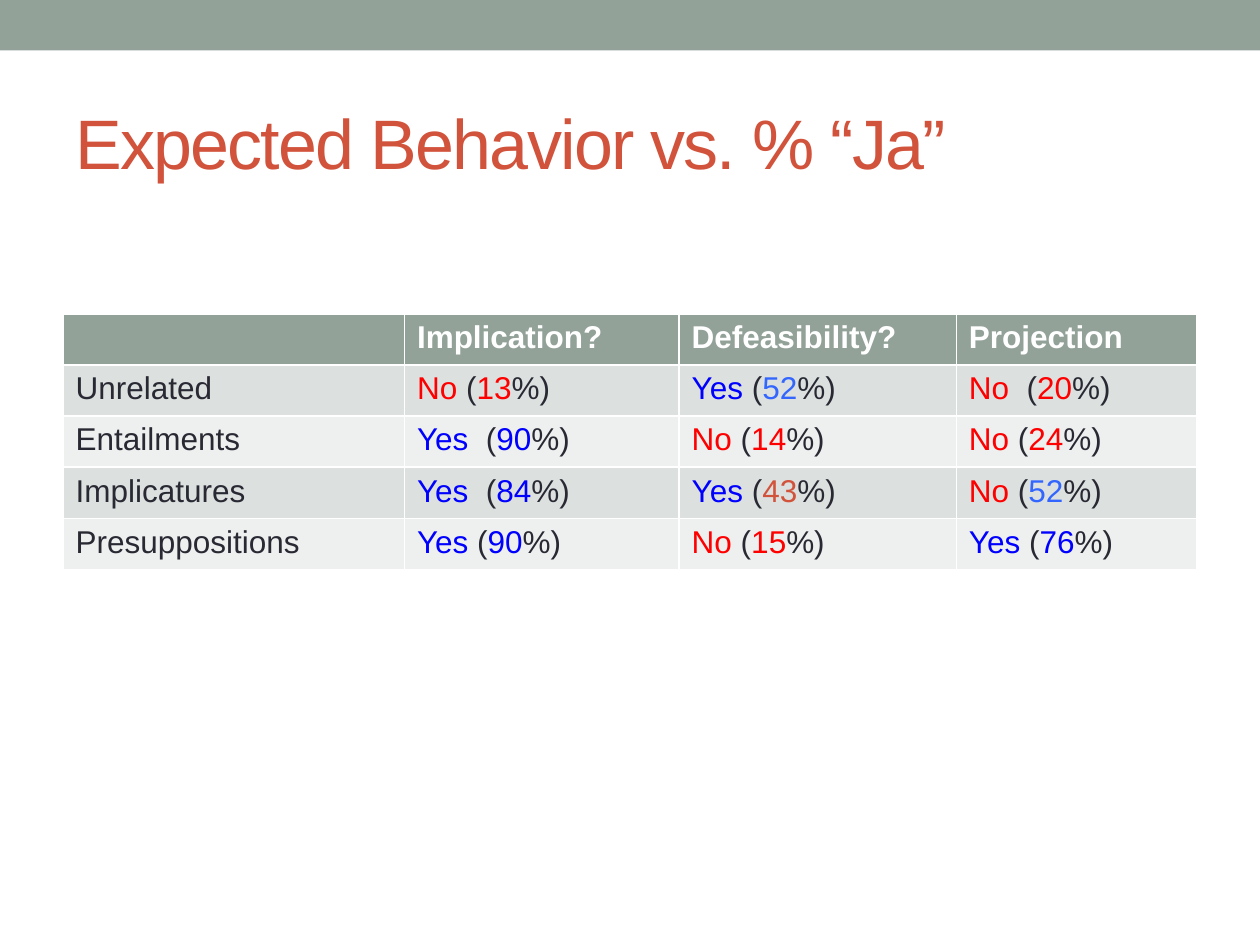
from dataclasses import dataclass

from pptx import Presentation, util as u
from pptx.dml.color import RGBColor
from pptx.enum import shapes, text


@dataclass(frozen=True)
class Theme:
    font: str = "Arial"
    title_size: int = 40
    table_size: int = 18
    sage: str = "93A299"
    bands: tuple = ("DCE0DE", "EEF0EF")
    ink: str = "292934"
    white: str = "FFFFFF"
    rust: str = "D2533C"
    yes: str = "0000FF"
    no: str = "FF0000"
    sky: str = "3366FF"


THEME = Theme()

HEADER = ["", "Implication?", "Defeasibility?", "Projection"]
RESULTS = [
    ["Unrelated", "No (13%)", "Yes (52%)", "No  (20%)"],
    ["Entailments", "Yes  (90%)", "No (14%)", "No (24%)"],
    ["Implicatures", "Yes  (84%)", "Yes (43%)", "No (52%)"],
    ["Presuppositions", "Yes (90%)", "No (15%)", "Yes (76%)"],
]
# Percentages whose colour differs from that of the expected answer
UNEXPECTED = {"52": THEME.sky, "43": THEME.rust}


class SlideBuilder:
    """Places elements by shares of the slide's width and height."""

    def __init__(self, deck, theme):
        self.deck, self.theme = deck, theme
        self.page = deck.slides.add_slide(deck.slide_layouts[6])

    def area(self, left, top, width, height):
        wide, high = self.deck.slide_width, self.deck.slide_height
        return [int(share * side) for share, side in
                zip((left, top, width, height), (wide, high, wide, high))]

    def add_spans(self, para, parts, size, bold=False):
        for words, colour in parts:
            span = para.add_run()
            span.text = words
            span.font.name = self.theme.font
            span.font.size = u.Pt(size)
            span.font.bold = bold
            span.font.color.rgb = RGBColor.from_string(colour)

    def band(self, *place, colour):
        box = self.page.shapes.add_shape(
            shapes.MSO_SHAPE.RECTANGLE, *self.area(*place))
        box.shadow.inherit = False
        box.fill.solid()
        box.fill.fore_color.rgb = RGBColor.from_string(colour)
        box.line.fill.background()

    def title(self, *place, words):
        frame = self.page.shapes.add_textbox(*self.area(*place)).text_frame
        frame.word_wrap = True
        frame.vertical_anchor = text.MSO_ANCHOR.MIDDLE
        para = frame.paragraphs[0]
        self.add_spans(para, [(words, self.theme.rust)], self.theme.title_size)
        para.runs[0].font._element.set("spc", "-100")

    def result_parts(self, words):
        """Split 'Yes (90%)' into its coloured pieces."""
        if "(" not in words:
            return [(words, self.theme.ink)]
        lead, figure = words.split("(")
        answer, percent = lead.rstrip(), figure.rstrip("%)")
        colour = self.theme.yes if answer == "Yes" else self.theme.no
        return [(answer, colour),
                (lead[len(answer):] + "(", self.theme.ink),
                (percent, UNEXPECTED.get(percent, colour)),
                ("%)", self.theme.ink)]

    def table(self, *place, header, rows, widths):
        # The default table style supplies the white rules
        grid = self.page.shapes.add_table(
            len(rows) + 1, len(header), *self.area(*place)).table
        for column, width in zip(grid.columns, widths):
            column.width = u.Inches(width)
        for r, row in enumerate([header] + rows):
            fill = self.theme.bands[(r - 1) % 2] if r else self.theme.sage
            for c, words in enumerate(row):
                cell = grid.cell(r, c)
                cell.fill.solid()
                cell.fill.fore_color.rgb = RGBColor.from_string(fill)
                para = cell.text_frame.paragraphs[0]
                para.font.size = u.Pt(self.theme.table_size)
                if words:
                    parts = (self.result_parts(words) if r
                             else [(words, self.theme.white)])
                    self.add_spans(para, parts, self.theme.table_size,
                                   bold=r == 0)


def main():
    deck = Presentation()
    deck.slide_width, deck.slide_height = u.Inches(10), u.Inches(7.5)
    slide = SlideBuilder(deck, THEME)

    # Top band and title
    slide.band(0, 0, 1, 0.4 / 7.5, colour=THEME.sage)
    slide.title(0.05, 0.58 / 7.5, 0.9, 1.08 / 7.5,
                words="Expected Behavior vs. % “Ja”")

    # Expected answers with the share of "Ja" responses
    slide.table(0.05, 2.49 / 7.5, 0.9, 2.03 / 7.5, header=HEADER,
                rows=RESULTS, widths=[2.71, 2.18, 2.2, 1.91])

    deck.save("out.pptx")


if __name__ == "__main__":
    main()
